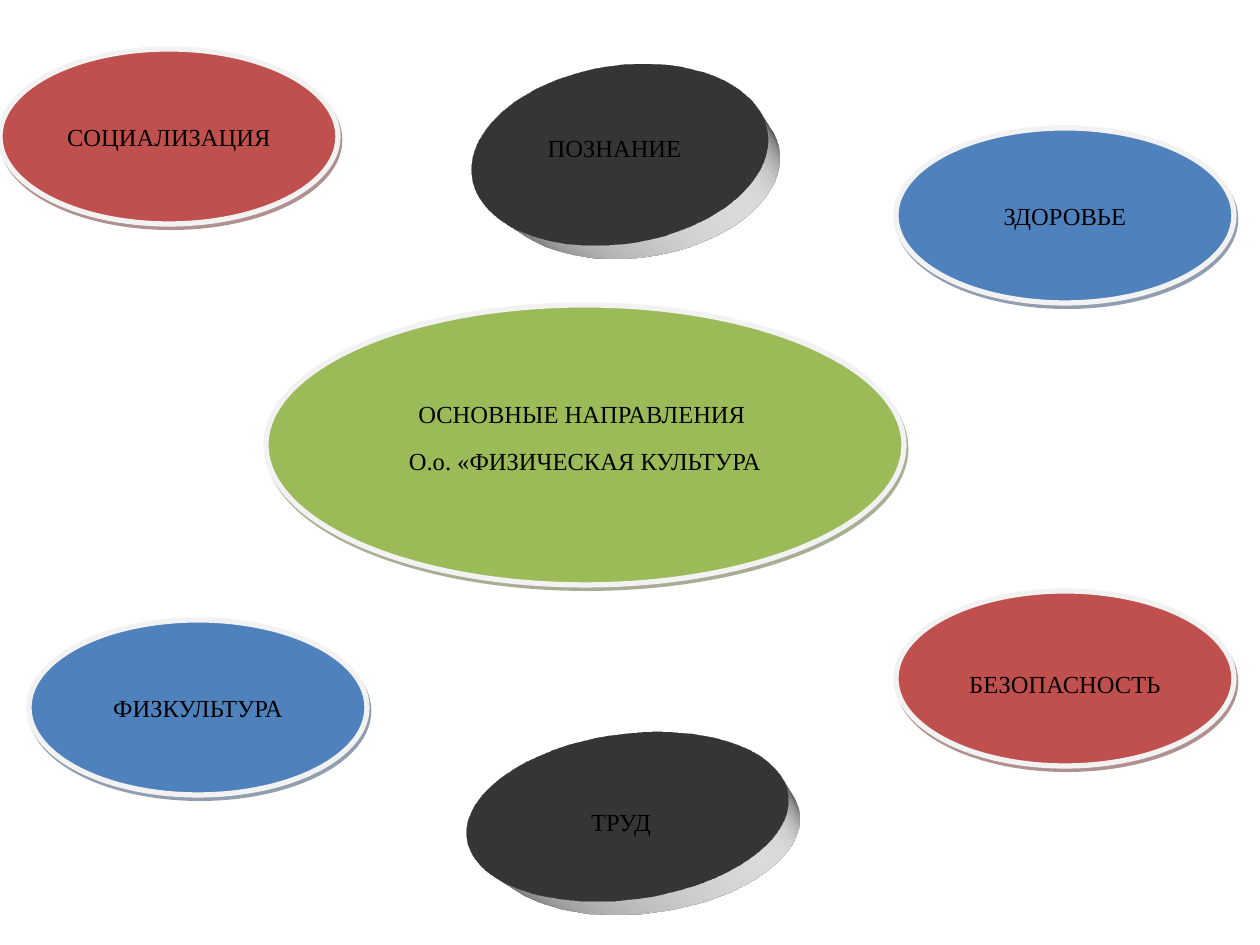
from lxml import etree
from pptx import Presentation
from pptx.dml.color import RGBColor
from pptx.enum.shapes import MSO_SHAPE
from pptx.enum.text import MSO_ANCHOR, PP_ALIGN
from pptx.oxml.ns import qn
from pptx.util import Pt

PX = 914400 / 126
OVAL = MSO_SHAPE.OVAL
MIDDLE = MSO_ANCHOR.MIDDLE
CENTER = PP_ALIGN.CENTER

COLORS = {
    "red": "C0504D", "red_shadow": "622423",
    "blue": "4F81BD", "blue_shadow": "243F60",
    "green": "9BBB59", "green_shadow": "4E6128",
    "rim": "F2F2F2", "text": "000000", "white": "FFFFFF",
}


def emu(px):
    return round(px * PX)


def rgb(name):
    return RGBColor.from_string(COLORS[name])


def add_xml(parent, tag, **attributes):
    return etree.SubElement(parent, qn(tag), attributes)


class Deck:
    FONT = {"name": "Times New Roman", "size": Pt(14)}
    PARAGRAPH = {"alignment": CENTER, "space_after": Pt(10)}

    def __init__(self, width, height):
        self.prs = Presentation()
        self.prs.slide_width, self.prs.slide_height = emu(width), emu(height)
        self.s = self.prs.slides.add_slide(self.prs.slide_layouts[6])

    def ellipse(self, box, fill, lines, shift=0):
        """Add a borderless ellipse; shift moves its text down by that many px."""
        sp = self.s.shapes.add_shape(OVAL, *map(emu, box))
        sp.shadow.inherit = False
        sp.fill.solid()
        sp.fill.fore_color.rgb = rgb(fill)
        sp.line.fill.background()
        tf = sp.text_frame
        frame = {
            "word_wrap": True, "vertical_anchor": MIDDLE,
            "margin_left": 0, "margin_right": 0,
            "margin_top": emu(max(0, 2 * shift)),
            "margin_bottom": emu(max(0, -2 * shift)),
        }
        for key, value in frame.items():
            setattr(tf, key, value)
        for i, line in enumerate(lines):
            p = tf.add_paragraph() if i else tf.paragraphs[0]
            for key, value in self.PARAGRAPH.items():
                setattr(p, key, value)
            r = p.add_run()
            r.text = line
            for key, value in self.FONT.items():
                setattr(r.font, key, value)
            r.font.color.rgb = rgb("text")
        return sp

    def rimmed_ellipse(self, box, color, lines, shift=0):
        sp = self.ellipse(box, color, lines, shift)
        sp.line.color.rgb = rgb("rim")
        sp.line.width = Pt(3)
        effects = sp._element.spPr.find(qn("a:effectLst"))
        shadow = add_xml(effects, "a:outerShdw", dist=str(Pt(2.2)),
                         dir=str(63 * 60000), algn="ctr", rotWithShape="0")
        clr = add_xml(shadow, "a:srgbClr", val=COLORS[color + "_shadow"])
        add_xml(clr, "a:alpha", val="50000")

    def extruded_ellipse(self, box, lines, shift=0):
        """Add a white disc with depth, turned 18 degrees both ways."""
        spPr = self.ellipse(box, "white", lines, shift)._element.spPr
        scene = add_xml(spPr, "a:scene3d")
        camera = add_xml(scene, "a:camera", prst="legacyPerspectiveFront")
        add_xml(camera, "a:rot", lat=str(342 * 60000), lon=str(18 * 60000), rev="0")
        add_xml(scene, "a:lightRig", rig="legacyHarsh2", dir="b")
        solid = add_xml(spPr, "a:sp3d", extrusionH="430200", prstMaterial="legacyMatte")
        for bevel in ("a:bevelT", "a:bevelB"):
            add_xml(solid, bevel, w="13500", h="13500", prst="angle")
        depth_color = add_xml(solid, "a:extrusionClr")
        add_xml(depth_color, "a:srgbClr", val=COLORS["white"])


def main():
    deck = Deck(1260, 945)
    deck.rimmed_ellipse((266, 305, 638, 280), "green",
                        ["ОСНОВНЫЕ НАПРАВЛЕНИЯ ", "О.о. «ФИЗИЧЕСКАЯ КУЛЬТУРА"], -8)
    for x, y, color, label, shift in (
        (0, 49, "red", "СОЦИАЛИЗАЦИЯ", 0),
        (29, 620, "blue", "ФИЗКУЛЬТУРА", 0),
        (896, 591, "red", "БЕЗОПАСНОСТЬ", 5),
        (896, 128, "blue", "ЗДОРОВЬЕ", 0),
    ):
        deck.rimmed_ellipse((x, y, 338, 175), color, [label], shift)
    deck.extruded_ellipse((452, 728, 338, 175), ["ТРУД"], 6)
    deck.extruded_ellipse((459, 59, 311, 188), ["ПОЗНАНИЕ"], -5)
    deck.prs.save("out.pptx")


if __name__ == "__main__":
    main()
